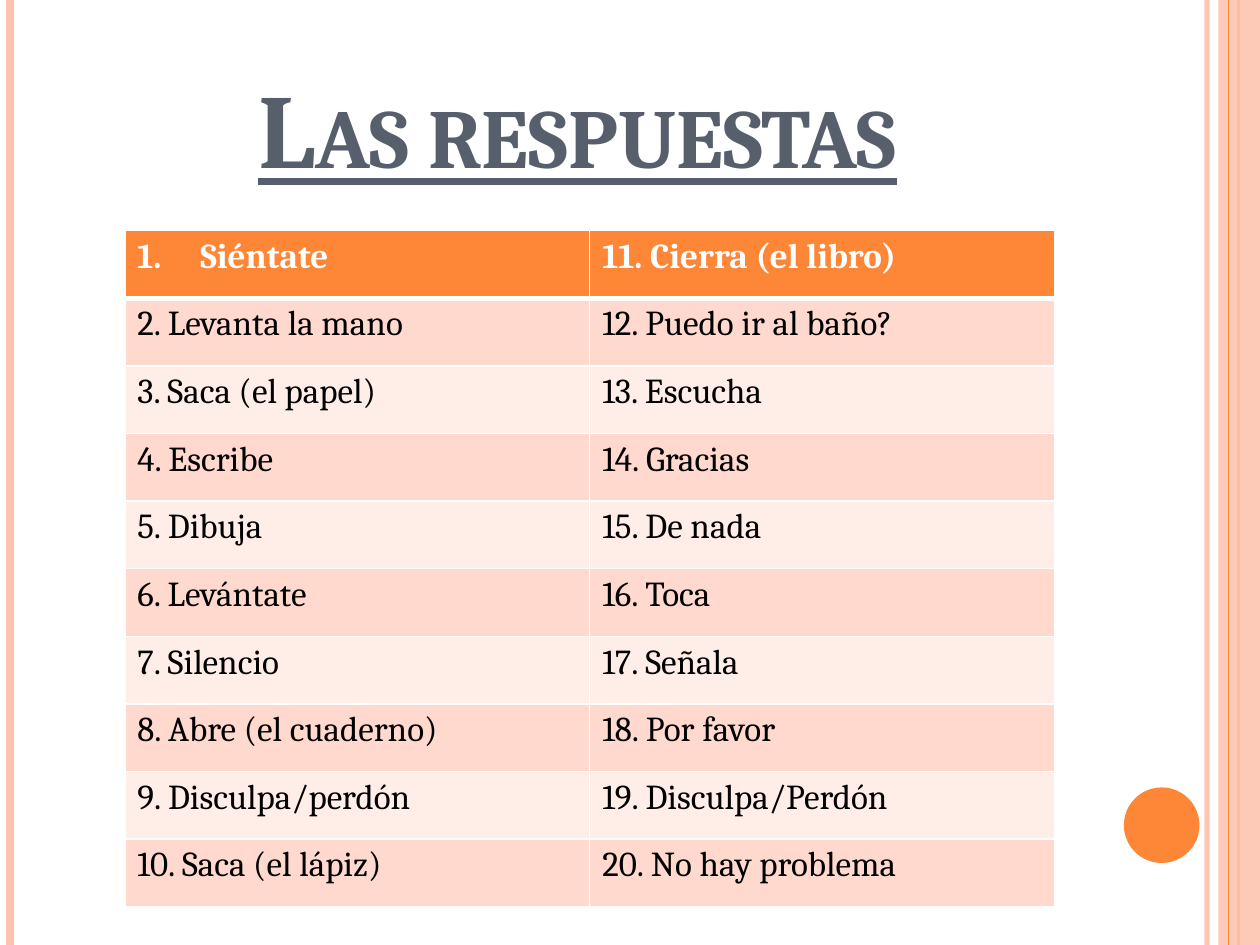
import pptx
import pptx.dml.color
import pptx.enum.shapes
import pptx.enum.text
import pptx.oxml
import pptx.oxml.ns
import pptx.util
from lxml import etree

RGBColor = pptx.dml.color.RGBColor
ORANGE = RGBColor(0xFE, 0x86, 0x37)
PEACH = RGBColor(0xFE, 0xC3, 0xAE)
SLATE = RGBColor(0x57, 0x5F, 0x6D)
BAND_DARK = RGBColor(0xFF, 0xD9, 0xCE)
BAND_LIGHT = RGBColor(0xFF, 0xED, 0xE8)
WHITE = RGBColor(0xFF, 0xFF, 0xFF)
BLACK = RGBColor(0, 0, 0)

ANSWERS = [
    ("Siéntate", "11. Cierra (el libro)"),
    ("2. Levanta la mano", "12. Puedo ir al baño?"),
    ("3. Saca (el papel)", "13. Escucha"),
    ("4. Escribe", "14. Gracias"),
    ("5. Dibuja", "15. De nada"),
    ("6. Levántate", "16. Toca"),
    ("7. Silencio", "17. Señala"),
    ("8. Abre (el cuaderno)", "18. Por favor"),
    ("9. Disculpa/perdón", "19. Disculpa/Perdón"),
    ("10. Saca (el lápiz)", "20. No hay problema"),
]


def write(frame, text, size=20, color=BLACK, bold=False, underline=None,
          small_caps=False, align=None, numbered=False):
    paragraph = frame.paragraphs[0]
    paragraph.alignment = align
    run = paragraph.add_run()
    run.text = text
    font = run.font
    font.name, font.size, font.bold = "Cambria", pptx.util.Pt(size), bold
    font.underline = underline
    font.color.rgb = color
    if small_caps:
        run._r.get_or_add_rPr().set("cap", "small")
    if numbered:
        properties = paragraph._p.get_or_add_pPr()
        hanging = pptx.util.Inches(0.5)
        properties.set("marL", str(hanging))
        properties.set("indent", str(-hanging))
        numbering = etree.SubElement(properties, pptx.oxml.ns.qn("a:buAutoNum"))
        numbering.set("type", "arabicPeriod")


def set_opacity(element, percent):
    color = element.xpath("./p:spPr//a:srgbClr")[0]
    alpha = etree.SubElement(color, pptx.oxml.ns.qn("a:alpha"))
    alpha.set("val", str(percent * 1000))


def set_borders(cell, bottom):
    properties = cell._tc.get_or_add_tcPr()
    for side, points in (("L", 1), ("R", 1), ("T", 1), ("B", bottom)):
        properties.append(pptx.oxml.parse_xml(
            f'<a:ln{side} {pptx.oxml.ns.nsdecls("a")} w="{pptx.util.Pt(points)}">'
            f'<a:solidFill><a:srgbClr val="{WHITE}"/></a:solidFill></a:ln{side}>'))


class Deck:
    """Slide builder whose lengths are percentages of the slide's width and height."""

    def __init__(self, width, height):
        self.presentation = pptx.Presentation()
        self.presentation.slide_width = pptx.util.Inches(width)
        self.presentation.slide_height = pptx.util.Inches(height)
        self.slide = self.presentation.slides.add_slide(
            self.presentation.slide_layouts[6])

    def box(self, left, top, width, height):
        across = self.presentation.slide_width / 100
        down = self.presentation.slide_height / 100
        return (round(left * across), round(top * down),
                round(width * across), round(height * down))

    def stripe(self, x, color, points, opacity=100):
        left, top, _, bottom = self.box(x, 0, 0, 100)
        stripe = self.slide.shapes.add_connector(
            pptx.enum.shapes.MSO_CONNECTOR.STRAIGHT, left, top, left, bottom)
        stripe.line.color.rgb = color
        stripe.line.width = pptx.util.Pt(points)
        etree.SubElement(stripe.element.spPr, pptx.oxml.ns.qn("a:effectLst"))
        if opacity < 100:
            set_opacity(stripe.element, opacity)

    def shape(self, kind, color, *place, opacity=100):
        shape = self.slide.shapes.add_shape(kind, *self.box(*place))
        shape.shadow.inherit = False
        shape.fill.solid()
        shape.fill.fore_color.rgb = color
        shape.line.fill.background()
        if opacity < 100:
            set_opacity(shape.element, opacity)

    def title(self, text, *place):
        frame = self.slide.shapes.add_textbox(*self.box(*place)).text_frame
        frame.word_wrap = True
        frame.vertical_anchor = pptx.enum.text.MSO_ANCHOR.BOTTOM
        write(frame, text, size=60, color=SLATE, bold=True, underline=True,
              small_caps=True, align=pptx.enum.text.PP_ALIGN.CENTER)

    def table(self, rows, *place):
        table = self.slide.shapes.add_table(
            len(rows), len(rows[0]), *self.box(*place)).table
        for r, texts in enumerate(rows):
            header = r == 0
            band = BAND_DARK if r % 2 else BAND_LIGHT
            for c, text in enumerate(texts):
                cell = table.cell(r, c)
                set_borders(cell, bottom=3 if header else 1)
                cell.fill.solid()
                cell.fill.fore_color.rgb = ORANGE if header else band
                write(cell.text_frame, text, color=WHITE if header else BLACK,
                      bold=header, numbered=header and c == 0)


def main():
    shapes = pptx.enum.shapes.MSO_SHAPE
    deck = Deck(10, 7.5)
    deck.stripe(95.8, PEACH, 3, opacity=93)
    deck.stripe(0.8, PEACH, 4.5)
    deck.stripe(98.3, ORANGE, 1.5)
    deck.shape(shapes.RECTANGLE, PEACH, 96.7, 0, 3.3, 100, opacity=87)
    deck.stripe(97.5, ORANGE, 0.75)
    deck.shape(shapes.OVAL, ORANGE, 89.2, 83.33, 6, 8)
    deck.title("Las respuestas", 5, 4, 81.7, 16.67)
    deck.table(ANSWERS, 9.9, 24.4, 73.8, 71.6)
    deck.presentation.save("out.pptx")


if __name__ == "__main__":
    main()
